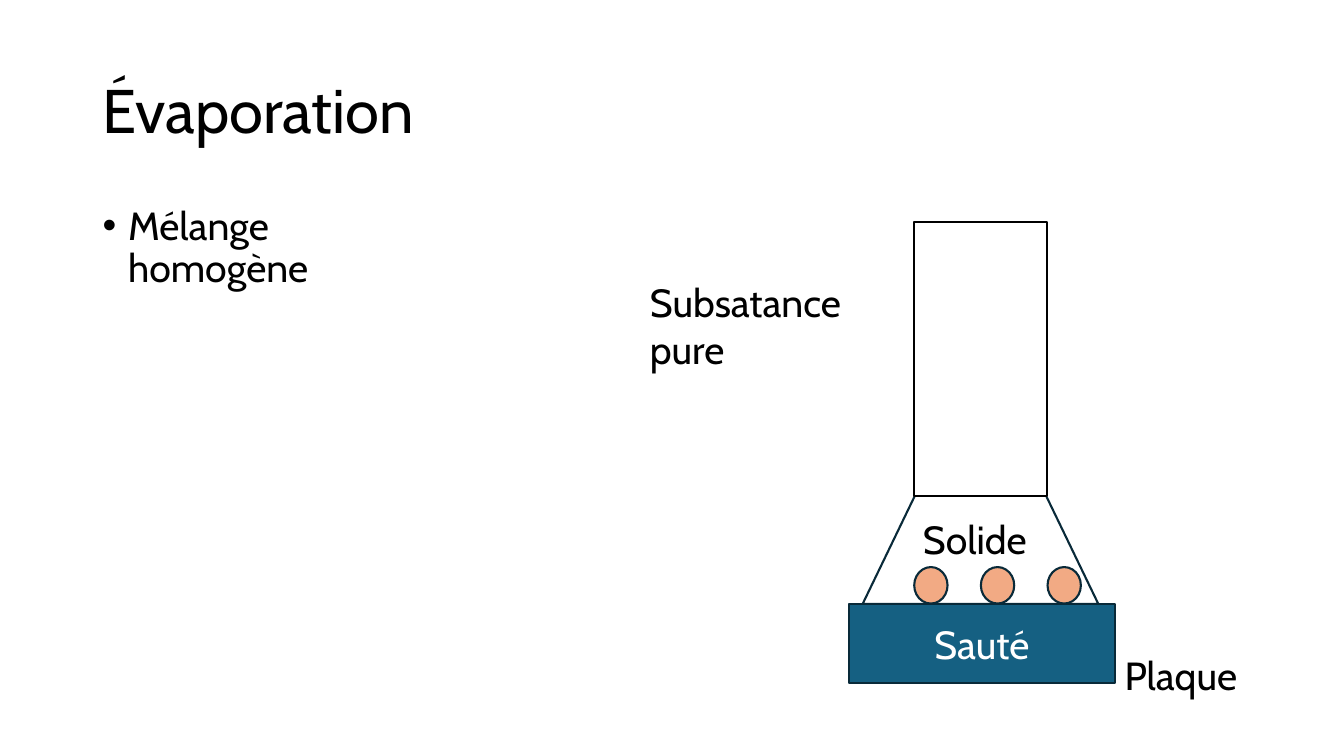
import pptx
import pptx.dml.color
import pptx.enum.shapes
import pptx.enum.text
import pptx.util
from lxml import etree
from pptx.util import Cm, Pt

COLORS = {
    "black": "000000",
    "white": "FFFFFF",
    "outline": "092A39",
    "plate": "156082",
    "grain": "F2AA84",
}
FONT = "Cabin"
SHAPES = pptx.enum.shapes.MSO_SHAPE
ANCHOR = pptx.enum.text.MSO_ANCHOR
ALIGN = pptx.enum.text.PP_ALIGN


def rgb(name):
    return pptx.dml.color.RGBColor.from_string(COLORS[name])


def write(shape, text, size=28, color="black", anchor=ANCHOR.TOP,
          align=ALIGN.LEFT, line_spacing=1.0, space_before=0):
    """Put one formatted paragraph in the shape and return it."""
    frame = shape.text_frame
    frame.word_wrap = True
    frame.vertical_anchor = anchor
    paragraph = frame.paragraphs[0]
    paragraph.alignment = align
    paragraph.line_spacing = line_spacing
    paragraph.space_before = Pt(space_before)
    run = paragraph.add_run()
    run.text = text
    run.font.name = FONT
    run.font.size = Pt(size)
    run.font.color.rgb = rgb(color)
    return paragraph


deck = pptx.Presentation()
deck.slide_width = Cm(33.87)
deck.slide_height = Cm(19.05)
slide = deck.slides.add_slide(deck.slide_layouts[6])

# Title and bullet
title = slide.shapes.add_textbox(Cm(2.34), Cm(1.02), Cm(29.21), Cm(3.68))
write(title, "Évaporation", size=44, anchor=ANCHOR.MIDDLE, line_spacing=0.9)

mixture = slide.shapes.add_textbox(Cm(2.34), Cm(5.08), Cm(6.1), Cm(12.09))
bullet = write(mixture, "Mélange homogène", line_spacing=0.9, space_before=10)
properties = bullet._p.get_or_add_pPr()
properties.set("marL", str(Cm(0.64)))
properties.set("indent", str(-Cm(0.64)))
A = "{http://schemas.openxmlformats.org/drawingml/2006/main}"
etree.SubElement(properties, A + "buFont", typeface="Arial")
etree.SubElement(properties, A + "buChar", char="•")

# Flask, solid grains and hot plate, from back to front
GRAIN_LEFT, GRAIN_STEP = 23.04, 1.68
flask_base = (SHAPES.ISOSCELES_TRIANGLE, 21.74, 9.07, 5.94, 6.15, "white", "outline")
flask_neck = (SHAPES.RECTANGLE, 23.04, 5.59, 3.35, 6.91, "white", "black")
grains = [
    (SHAPES.OVAL, GRAIN_LEFT + i * GRAIN_STEP, 14.29, 0.84, 0.92, "grain", "outline")
    for i in range(3)
]
hot_plate = (SHAPES.RECTANGLE, 21.39, 15.21, 6.71, 2.01, "plate", "outline")

for kind, left, top, width, height, fill, line in [flask_base, flask_neck, *grains, hot_plate]:
    part = slide.shapes.add_shape(kind, Cm(left), Cm(top), Cm(width), Cm(height))
    part.shadow.inherit = False
    part.fill.solid()
    part.fill.fore_color.rgb = rgb(fill)
    part.line.color.rgb = rgb(line)
    part.line.width = Pt(1.5)
    if fill == "plate":
        write(part, "Sauté", color="white", anchor=ANCHOR.MIDDLE, align=ALIGN.CENTER)

# Labels
for text, left, top, width, height in [
    ("Plaque", 28.09, 16.28, 3.96, 1.45),
    ("Subsatance pure", 16.13, 6.88, 6.15, 2.64),
    ("Solide", 23.01, 12.85, 3.96, 1.45),
]:
    label = slide.shapes.add_textbox(Cm(left), Cm(top), Cm(width), Cm(height))
    write(label, text)
    label.text_frame.auto_size = pptx.enum.text.MSO_AUTO_SIZE.SHAPE_TO_FIT_TEXT

deck.save("out.pptx")
